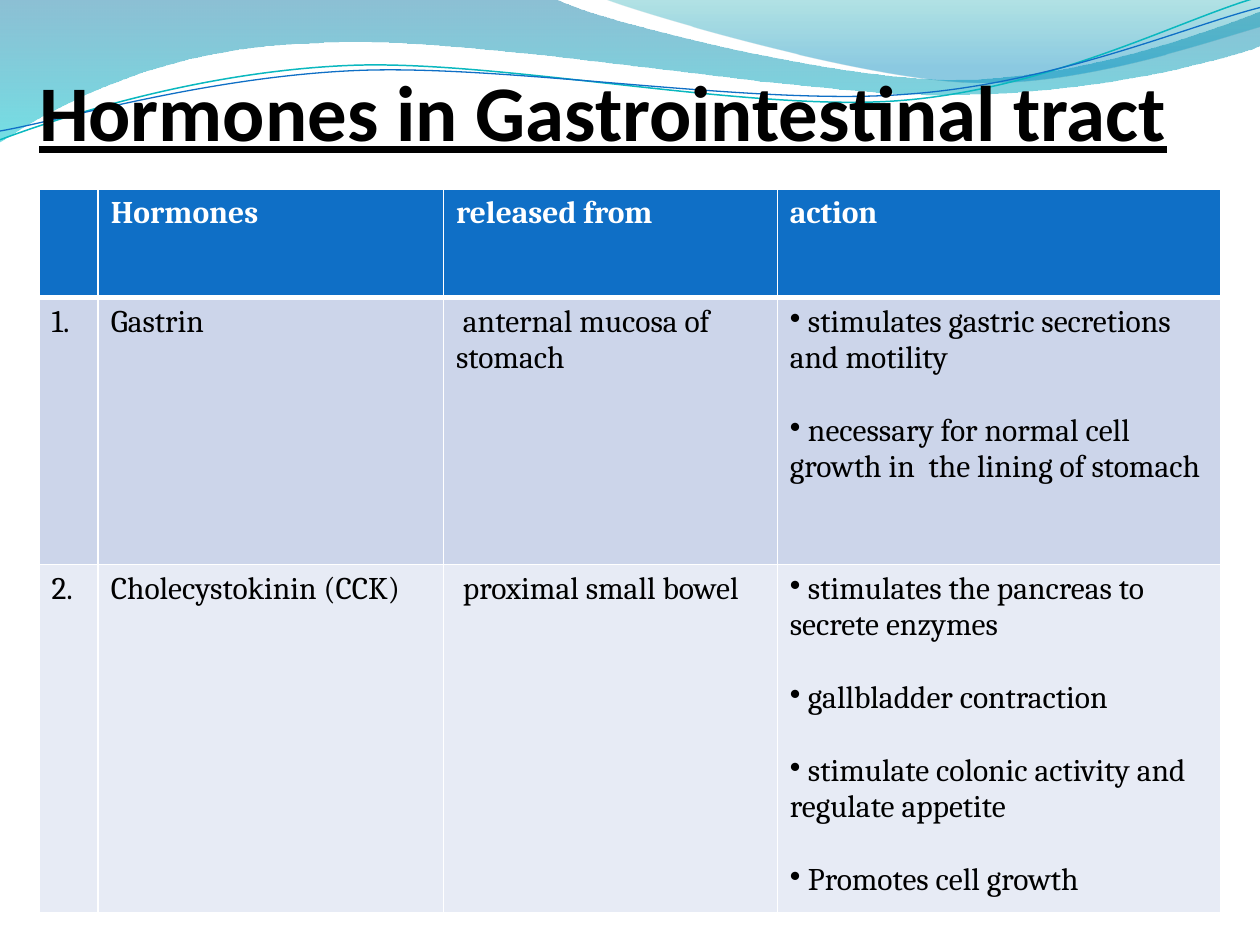
from lxml import etree
from pptx import Presentation
from pptx.dml.color import RGBColor
from pptx.enum.text import MSO_ANCHOR
from pptx.oxml.ns import qn
from pptx.util import Inches, Pt

BOTTOM = MSO_ANCHOR.BOTTOM
COLORS = {
    "header": "0F6FC6", "odd row": "CCD5EA", "even row": "E7EBF5",
    "white": "FFFFFF", "black": "000000", "teal line": "0AB8BF",
    "deep blue": "0074A1", "cyan": "00C6CF", "teal": "00A1A9", "blue": "008BBF",
}

# Outlines in inches: two numbers are a line's end, six are a Bézier curve.
LEFT_WAVE = [
    (0, 0), (4.4, -0.01), (4.76, 0.17, 6.64, 0.63, 7.58, 0.63),
    (8.53, 0.63, 9.58, 0.26, 10, 0.09), (10.01, 0.36),
    (9.83, 0.44, 8.7, 0.76, 7.46, 0.75), (6.22, 0.75, 3.82, 0.28, 2.57, 0.34),
    (1.29, 0.36, 0.46, 0.83, -0.01, 1.13), (0, 0),
]
RIGHT_WAVE = [
    (4.79, -0.01), (5.09, 0.11, 6.82, 0.62, 7.69, 0.65),
    (8.56, 0.69, 9.61, 0.32, 10, 0.21), (10, 0), (4.79, -0.01),
]
TEAL_STRAND = [
    (0, 1.11), (0.48, 0.93, 1.58, 0.57, 2.77, 0.52),
    (3.95, 0.47, 5.93, 0.89, 7.13, 0.8), (8.33, 0.71, 9.38, 0.15, 9.98, -0.02),
]
BLUE_STRAND = [
    (0, 1.04), (0.47, 0.96, 1.64, 0.61, 2.83, 0.56),
    (4.03, 0.51, 5.97, 0.84, 7.17, 0.75), (8.36, 0.67, 9.41, 0.21, 10, 0.06),
]

COLUMN_WIDTHS = [0.47, 2.74, 2.65, 3.52]
ROW_HEIGHTS = [0.86, 2.12, 2.58]
HEADINGS = ["", "Hormones", "released from", "action"]
HORMONES = [
    ["1.", "Gastrin", " anternal mucosa of stomach",
     [" stimulates gastric secretions and motility",
      " necessary for normal cell growth in  the lining of stomach"]],
    ["2.", "Cholecystokinin (CCK)", " proximal small bowel",
     [" stimulates the pancreas to secrete enzymes",
      " gallbladder contraction",
      " stimulate colonic activity and regulate appetite",
      " Promotes cell growth"]],
]


def rgb(name):
    return RGBColor.from_string(COLORS[name])


def add_outline(slide, left, top, outline, close):
    """Build the outline from its end points, then bend the curved segments."""
    ends = [(Inches(left + part[-2]), Inches(top + part[-1])) for part in outline]
    builder = slide.shapes.build_freeform(*ends[0], scale=1.0)
    builder.add_line_segments(ends[1:], close=close)
    shape = builder.convert_to_shape()
    shape.shadow.inherit = False
    lines = list(shape._element.iter(qn("a:lnTo")))
    for line, part in zip(lines, outline[1:]):
        if len(part) == 2:
            continue
        curve = etree.Element(qn("a:cubicBezTo"))
        for x, y in zip(part[::2], part[1::2]):
            etree.SubElement(curve, qn("a:pt"),
                             x=str(Inches(left + x) - shape.left),
                             y=str(Inches(top + y) - shape.top))
        line.getparent().replace(line, curve)
    return shape


def add_wave(slide, left, top, outline, stops):
    """Stops are (position, colour name, opacity percent), from top to bottom."""
    shape = add_outline(slide, left, top, outline, True)
    shape.line.fill.background()
    shape.fill.gradient()
    shape.fill.gradient_angle = 270
    for stop, (position, color, _) in zip(shape.fill.gradient_stops, stops):
        stop.position = position
        stop.color.rgb = rgb(color)
    for element, (_, _, opacity) in zip(shape._element.iter(qn("a:srgbClr")), stops):
        etree.SubElement(element, qn("a:alpha"), val=str(opacity * 1000))


def add_strand(slide, left, top, outline, color, width):
    shape = add_outline(slide, left, top, outline, False)
    shape.fill.background()
    shape.line.color.rgb = rgb(color)
    shape.line.width = Pt(width)


def add_banner(slide, left, top):
    add_wave(slide, left, top, LEFT_WAVE, [(0, "deep blue", 45), (1, "cyan", 55)])
    add_wave(slide, left, top, RIGHT_WAVE, [(0, "teal", 30), (0.8, "blue", 45)])
    add_strand(slide, left, top, TEAL_STRAND, "teal line", 0.85)
    add_strand(slide, left, top, BLUE_STRAND, "header", 0.75)


def add_text(paragraph, text, name, size, color, bold):
    """Set the font on the run, so that a bullet takes its size as well."""
    run = paragraph.add_run()
    run.text = text
    font = run.font
    font.name, font.size, font.bold = name, Pt(size), bold
    font.color.rgb = rgb(color)
    return font


def add_title(slide, left, top, width, height):
    box = slide.shapes.add_textbox(Inches(left), Inches(top), Inches(width), Inches(height))
    frame = box.text_frame
    frame.word_wrap = True
    frame.vertical_anchor = BOTTOM
    frame.margin_left = frame.margin_right = frame.margin_bottom = 0
    font = add_text(frame.paragraphs[0], "Hormones in Gastrointestinal tract",
                    "Calibri", 45, "black", True)
    font.underline = True


def set_borders(cell, widths):
    """Widths in points run left, right, top, bottom."""
    properties = cell._tc.get_or_add_tcPr()
    for index, (side, width) in enumerate(zip("LRTB", widths)):
        border = etree.Element(qn(f"a:ln{side}"), w=str(Pt(width)))
        fill = etree.SubElement(border, qn("a:solidFill"))
        etree.SubElement(fill, qn("a:srgbClr"), val=COLORS["white"])
        properties.insert(index, border)


def add_bullet(paragraph):
    properties = paragraph._p.get_or_add_pPr()
    properties.set("marL", "0")
    properties.set("indent", "0")
    etree.SubElement(properties, qn("a:buChar"), char="•")


def fill_cell(cell, content, fill, text_color, is_header):
    """A list becomes bullets, one blank line's height apart."""
    bulleted = isinstance(content, list)
    frame = cell.text_frame
    for index, text in enumerate(content if bulleted else [content]):
        paragraph = frame.add_paragraph() if index else frame.paragraphs[0]
        if text:
            add_text(paragraph, text, "Cambria", 18, text_color, is_header)
        if index:
            paragraph.space_before = Pt(20.8)
        if bulleted:
            add_bullet(paragraph)
    cell.fill.solid()
    cell.fill.fore_color.rgb = rgb(fill)


def add_hormone_table(slide, left, top):
    rows = [HEADINGS, *HORMONES]
    table = slide.shapes.add_table(
        len(rows), len(HEADINGS), Inches(left), Inches(top),
        Inches(sum(COLUMN_WIDTHS)), Inches(sum(ROW_HEIGHTS))).table
    for column, width in zip(table.columns, COLUMN_WIDTHS):
        column.width = Inches(width)
    for row, height in zip(table.rows, ROW_HEIGHTS):
        row.height = Inches(height)
    row_fills = ["header", "odd row", "even row"]
    for row_index, contents in enumerate(rows):
        is_header = row_index == 0
        text_color = "white" if is_header else "black"
        widths = (1, 1, 3 if row_index == 1 else 1, 3 if is_header else 1)
        for column_index, content in enumerate(contents):
            cell = table.cell(row_index, column_index)
            fill_cell(cell, content, row_fills[row_index], text_color, is_header)
            set_borders(cell, widths)


def main():
    presentation = Presentation()
    presentation.slide_width = Inches(10)
    presentation.slide_height = Inches(7.5)
    slide = presentation.slides.add_slide(presentation.slide_layouts[6])
    add_banner(slide, 0, 0)
    add_title(slide, 0.31, 0, 9.45, 1.25)
    add_hormone_table(slide, 0.31, 1.5)
    presentation.save("out.pptx")


if __name__ == "__main__":
    main()
